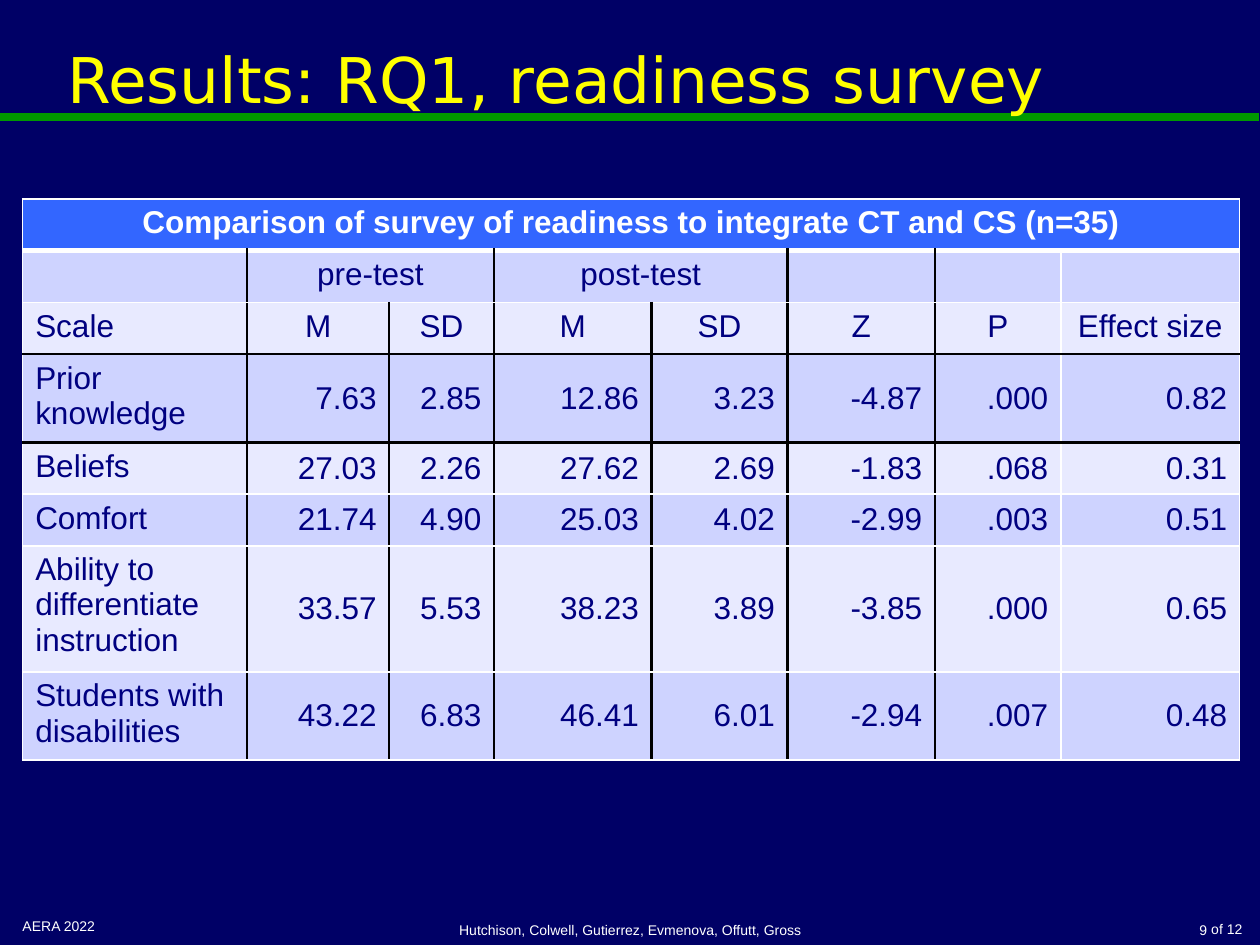
from dataclasses import dataclass
from typing import NamedTuple

from lxml import etree
from pptx import Presentation, util as u
from pptx.dml.color import RGBColor
from pptx.enum import shapes, text
from pptx.oxml import ns

LEFT, CENTER, RIGHT = text.PP_ALIGN.LEFT, text.PP_ALIGN.CENTER, text.PP_ALIGN.RIGHT
TOP, MIDDLE, BOTTOM = (text.MSO_ANCHOR.TOP, text.MSO_ANCHOR.MIDDLE,
                       text.MSO_ANCHOR.BOTTOM)
WIDTH, HEIGHT = u.Inches(10), u.Inches(7.5)


@dataclass(frozen=True)
class Theme:
    background: str = "000066"
    rule: str = "009900"
    title: str = "FFFF00"
    white: str = "FFFFFF"
    black: str = "000000"
    header: str = "3366FF"
    bands: tuple = ("E8EAFF", "CED3FF")
    ink: str = "000080"
    title_font: str = "DejaVu Sans"
    body_font: str = "Arial"
    title_size: int = 36
    table_size: int = 18
    footer_size: int = 8


class Area(NamedTuple):
    """Position and size as percentages of the slide."""
    left: float
    top: float
    width: float
    height: float


class Label(NamedTuple):
    words: str
    area: Area
    align: text.PP_ALIGN
    anchor: text.MSO_ANCHOR


class Edge(NamedTuple):
    color: str
    points: float


THEME = Theme()
THIN = Edge(THEME.white, 1)
THICK = Edge(THEME.white, 3)
DARK = Edge(THEME.black, 1.5)

TITLE = Label("Results: RQ1, readiness survey", Area(0.8, 0, 86.7, 16.67), CENTER, MIDDLE)
FOOTERS = [
    Label("of 12", Area(95, 96.8, 4.6, 3.2), RIGHT, TOP),
    Label("AERA 2022", Area(0.8, 96.4, 23.3, 3.5), LEFT, TOP),
    Label("Hutchison, Colwell, Gutierrez, Evmenova, Offutt, Gross",
          Area(34.2, 96.4, 31.7, 3.6), CENTER, BOTTOM),
    Label("9", Area(78.7, 96.4, 18.1, 3.6), RIGHT, BOTTOM),
]

TABLE_LEFT, TABLE_TOP, ROW_HEIGHT = 1.8, 21.07, 5.47
COLUMNS = [17.8, 11.3, 8.3, 12.5, 10.8, 11.7, 10, 14.2]
ROWS = [
    ["Comparison of survey of readiness to integrate CT and CS (n=35)"] + [""] * 7,
    ["", "pre-test", "", "post-test", "", "", "", ""],
    ["Scale", "M", "SD", "M", "SD", "Z", "P", "Effect size"],
    ["Prior knowledge", "7.63", "2.85", "12.86", "3.23", "-4.87", ".000", "0.82"],
    ["Beliefs", "27.03", "2.26", "27.62", "2.69", "-1.83", ".068", "0.31"],
    ["Comfort", "21.74", "4.90", "25.03", "4.02", "-2.99", ".003", "0.51"],
    ["Ability to differentiate instruction",
     "33.57", "5.53", "38.23", "3.89", "-3.85", ".000", "0.65"],
    ["Students with disabilities",
     "43.22", "6.83", "46.41", "6.01", "-2.94", ".007", "0.48"],
]
SPANS = {(0, 0): 8, (1, 1): 2, (1, 3): 2}
FIRST_DATA_ROW = 3


def across(share: float) -> int:
    return round(WIDTH * share / 100)


def down(share: float) -> int:
    return round(HEIGHT * share / 100)


def style_font(font, name: str, size: float, color: str, bold: bool = False) -> None:
    font.name, font.size, font.bold = name, u.Pt(size), bold
    font.color.rgb = RGBColor.from_string(color)


def add_label(page, label: Label, font: str, size: float, color: str) -> None:
    area = label.area
    box = page.shapes.add_textbox(across(area.left), down(area.top),
                                  across(area.width), down(area.height))
    frame = box.text_frame
    frame.word_wrap, frame.vertical_anchor = True, label.anchor
    para = frame.paragraphs[0]
    para.text, para.alignment = label.words, label.align
    style_font(para.font, font, size, color)


def add_rule(page) -> None:
    rule = page.shapes.add_connector(shapes.MSO_CONNECTOR.STRAIGHT,
                                     0, down(12.4), across(99.9), down(12.4))
    rule.line.color.rgb = RGBColor.from_string(THEME.rule)
    rule.line.width = u.Pt(4.5)
    etree.SubElement(rule._element.spPr, ns.qn("a:effectLst"))


def vertical_edge(row: int, column: int) -> Edge:
    return DARK if row > 0 and 1 <= column <= 6 else THIN


def horizontal_edge(row: int) -> Edge:
    return {1: THICK, 3: DARK, 4: DARK}.get(row, THIN)


def set_borders(cell, row: int, column: int, span: int) -> None:
    edges = {"L": vertical_edge(row, column), "R": vertical_edge(row, column + span),
             "T": horizontal_edge(row), "B": horizontal_edge(row + 1)}
    properties = cell._tc.get_or_add_tcPr()
    for index, (side, edge) in enumerate(edges.items()):
        line = etree.Element(ns.qn(f"a:ln{side}"), w=str(u.Pt(edge.points)))
        fill = etree.SubElement(line, ns.qn("a:solidFill"))
        etree.SubElement(fill, ns.qn("a:srgbClr"), val=edge.color)
        properties.insert(index, line)


def fill_cell(cell, row: int, column: int, words: str) -> None:
    header, numeric = row == 0, row >= FIRST_DATA_ROW and column > 0
    cell.fill.solid()
    cell.fill.fore_color.rgb = RGBColor.from_string(
        THEME.header if header else THEME.bands[row % 2])
    cell.vertical_anchor = MIDDLE if numeric else TOP
    para = cell.text_frame.paragraphs[0]
    para.text = words
    if numeric:
        para.alignment = RIGHT
    else:
        para.alignment = LEFT if column == 0 and not header else CENTER
    style_font(para.font, THEME.body_font, THEME.table_size,
               THEME.white if header else THEME.ink, header)


def add_results(page) -> None:
    table = page.shapes.add_table(
        len(ROWS), len(COLUMNS), across(TABLE_LEFT), down(TABLE_TOP),
        across(sum(COLUMNS)), down(ROW_HEIGHT * len(ROWS))).table
    table.horz_banding = False
    for column, share in zip(table.columns, COLUMNS):
        column.width = across(share)
    for line in table.rows:
        line.height = down(ROW_HEIGHT)
    for (row, column), span in SPANS.items():
        table.cell(row, column).merge(table.cell(row, column + span - 1))
    for row, values in enumerate(ROWS):
        for column, words in enumerate(values):
            cell = table.cell(row, column)
            if not cell.is_spanned:
                fill_cell(cell, row, column, words)
                set_borders(cell, row, column, SPANS.get((row, column), 1))


def main() -> None:
    deck = Presentation()
    deck.slide_width, deck.slide_height = WIDTH, HEIGHT
    page = deck.slides.add_slide(deck.slide_layouts[6])
    page.background.fill.solid()
    page.background.fill.fore_color.rgb = RGBColor.from_string(THEME.background)

    # Heading and rule
    add_rule(page)
    add_label(page, TITLE, THEME.title_font, THEME.title_size, THEME.title)

    # Survey results
    add_results(page)

    # Footer
    for label in FOOTERS:
        add_label(page, label, THEME.body_font, THEME.footer_size, THEME.white)

    deck.save("out.pptx")


if __name__ == "__main__":
    main()
